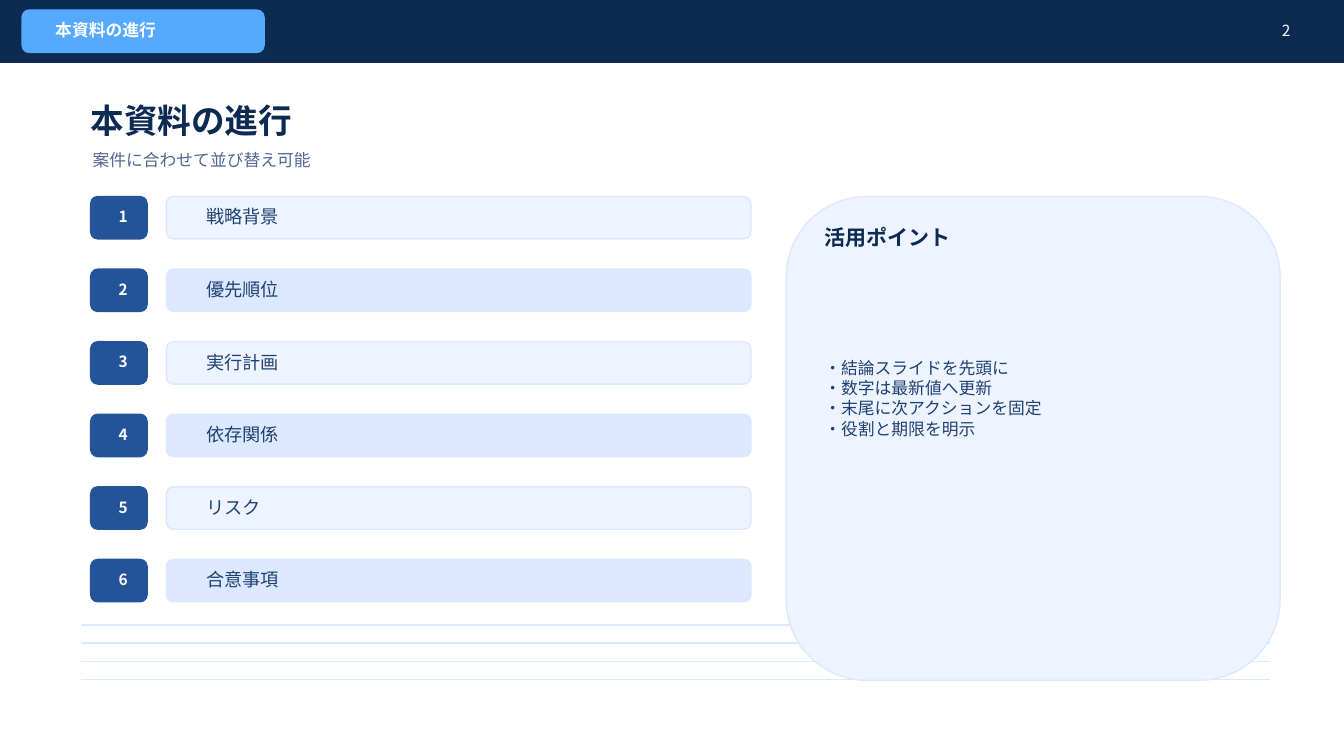
from dataclasses import dataclass

from lxml import etree
from pptx import Presentation
from pptx import util as u
from pptx.dml import color
from pptx.enum import shapes, text
from pptx.oxml import ns

HUES = {
    "navy": "0C2A52", "sky": "55A9FF", "blue": "23549A", "pale": "EEF4FF",
    "mist": "DCE8FF", "ink": "1F4172", "slate": "4F6792", "white": "FFFFFF",
}
SANS = "Noto Sans CJK JP"
RECT = shapes.MSO_SHAPE.RECTANGLE
ROUND = shapes.MSO_SHAPE.ROUNDED_RECTANGLE
LEFT, MID, RIGHT = text.PP_ALIGN.LEFT, text.PP_ALIGN.CENTER, text.PP_ALIGN.RIGHT


@dataclass
class Box:
    x: float
    y: float
    w: float
    h: float

    def size(self) -> list[u.Pt]:
        return [u.Pt(v) for v in (self.x, self.y, self.w, self.h)]


@dataclass
class Panel:
    box: Box
    fill: str
    edge: str
    kind: shapes.MSO_SHAPE = ROUND


@dataclass
class Label:
    box: Box
    lines: list[str]
    size: float
    hue: str
    bold: bool = False
    font: str = SANS
    align: text.PP_ALIGN = LEFT
    pitch: float | None = None


def rgb(name: str) -> color.RGBColor:
    return color.RGBColor.from_string(HUES[name])


def draw_rule(slide, y: float) -> None:
    rule = slide.shapes.add_connector(
        shapes.MSO_CONNECTOR.STRAIGHT, u.Pt(57.6), u.Pt(y), u.Pt(907.2), u.Pt(y))
    rule.line.color.rgb = rgb("mist")
    rule.line.width = u.Pt(1)
    etree.SubElement(rule._element.spPr, ns.qn("a:effectLst"))


def draw_panel(slide, panel: Panel) -> None:
    shape = slide.shapes.add_shape(panel.kind, *panel.box.size())
    shape.shadow.inherit = False
    shape.fill.solid()
    shape.fill.fore_color.rgb = rgb(panel.fill)
    shape.line.color.rgb = rgb(panel.edge)
    shape.line.width = u.Pt(1)


def draw_label(slide, label: Label) -> None:
    frame = slide.shapes.add_textbox(*label.box.size()).text_frame
    frame.word_wrap = True
    frame.vertical_anchor = text.MSO_ANCHOR.MIDDLE
    for i, line in enumerate(label.lines):
        para = frame.add_paragraph() if i else frame.paragraphs[0]
        para.alignment = label.align
        if label.pitch:
            para.line_spacing = u.Pt(label.pitch)
        run = para.add_run()
        run.text = line
        run.font.name = label.font
        run.font.size = u.Pt(label.size)
        run.font.bold = label.bold
        run.font.color.rgb = rgb(label.hue)


def draw_step(slide, i: int, topic: str) -> None:
    y = 140.4 + 51.84 * i
    tone = "mist" if i % 2 else "pale"
    draw_panel(slide, Panel(Box(64.8, y, 40.32, 30.24), "blue", "blue"))
    draw_label(slide, Label(Box(77.76, y + 7.2, 14.4, 14.4), [str(i + 1)],
                            11, "white", True, align=MID))
    draw_panel(slide, Panel(Box(118.8, y, 417.6, 30.24), tone, "mist"))
    draw_label(slide, Label(Box(140.4, y + 7.2, 374.4, 14.4), [topic], 13, "ink"))


def main() -> None:
    deck = Presentation()
    deck.slide_width, deck.slide_height = u.Pt(960), u.Pt(540)
    slide = deck.slides.add_slide(deck.slide_layouts[6])
    slide.background.fill.solid()
    slide.background.fill.fore_color.rgb = rgb("white")

    # Rules at the foot
    for i in range(4):
        draw_rule(slide, 446.4 + 12.96 * i)

    # Top band and headings
    title = "本資料の進行"
    draw_panel(slide, Panel(Box(0, 0, 960, 44.64), "navy", "navy", RECT))
    draw_panel(slide, Panel(Box(15.84, 7.2, 172.8, 30.24), "sky", "sky"))
    heads = [
        Label(Box(32.4, 12.96, 633.6, 17.28), [title], 12, "white", True),
        Label(Box(874.8, 12.96, 54, 17.28), ["2"], 11, "white", align=RIGHT),
        Label(Box(57.6, 68.4, 820.8, 34.56), [title], 24, "navy", True, "Arial Narrow"),
        Label(Box(59.04, 103.68, 806.4, 21.6), ["案件に合わせて並び替え可能"], 12, "slate"),
    ]
    for head in heads:
        draw_label(slide, head)

    # Agenda steps
    topics = ["戦略背景", "優先順位", "実行計画", "依存関係", "リスク", "合意事項"]
    for i, topic in enumerate(topics):
        draw_step(slide, i, topic)

    # Tips panel
    tips = ["・結論スライドを先頭に", "・数字は最新値へ更新",
            "・末尾に次アクションを固定", "・役割と期限を明示"]
    draw_panel(slide, Panel(Box(561.6, 140.4, 352.8, 345.6), "pale", "mist"))
    draw_label(slide, Label(Box(581.76, 158.4, 295.2, 21.6), ["活用ポイント"],
                            15, "navy", True))
    draw_label(slide, Label(Box(581.76, 194.4, 302.4, 180), tips, 12, "ink", pitch=14.4))

    deck.save("out.pptx")


if __name__ == "__main__":
    main()
